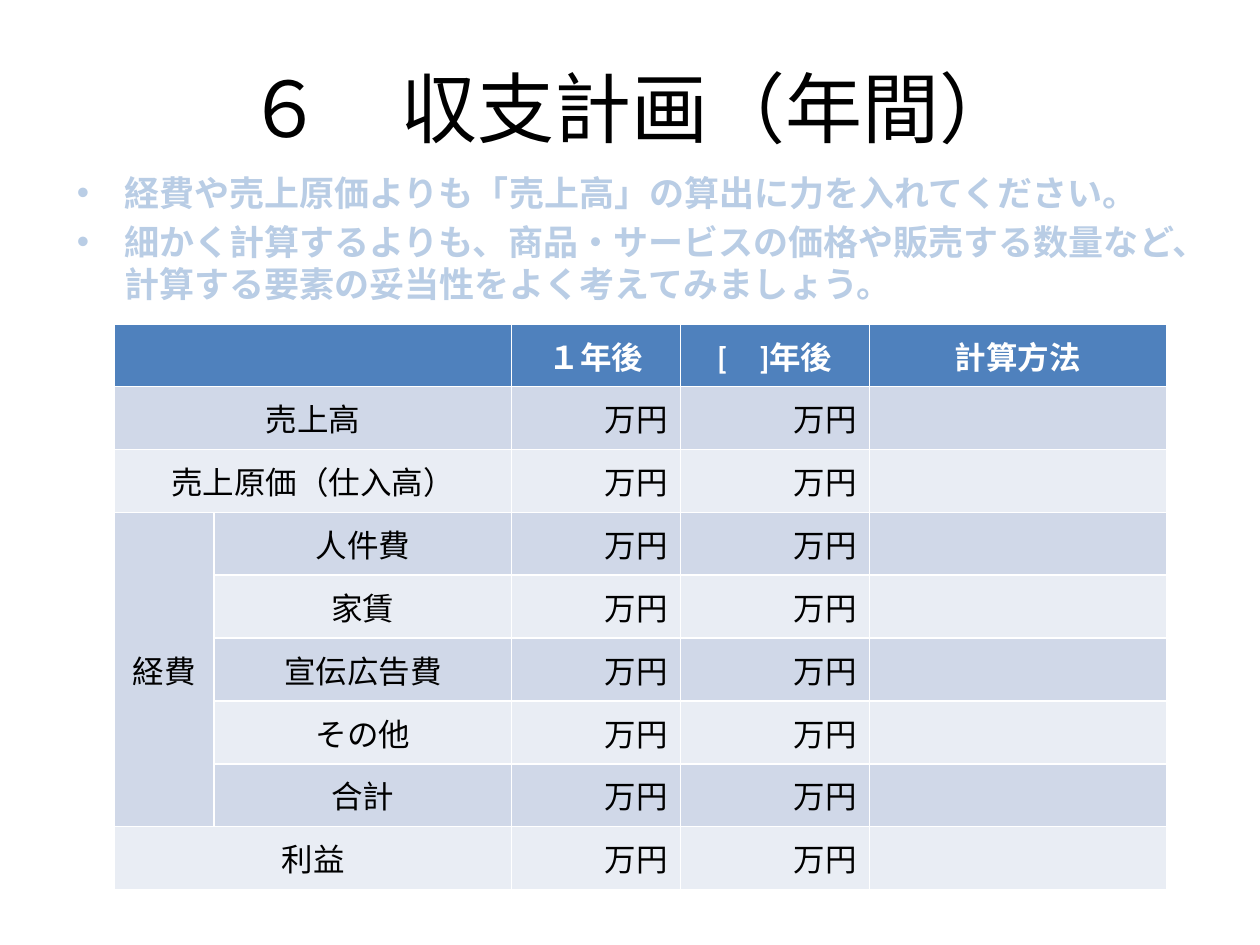
from pptx import Presentation
from pptx.dml.color import RGBColor
from pptx.enum.text import MSO_ANCHOR, PP_ALIGN
from pptx.util import Inches, Pt

CENTER = PP_ALIGN.CENTER
RIGHT = PP_ALIGN.RIGHT
MIDDLE = MSO_ANCHOR.MIDDLE
TITLE_AND_CONTENT = 1

HEADERS = ["", "", "１年後", "[　]年後", "計算方法"]
ITEMS = [
    ("売上高", ""),
    ("売上原価（仕入高）", ""),
    ("経費", "人件費"),
    ("", "家賃"),
    ("", "宣伝広告費"),
    ("", "その他"),
    ("", "合計"),
    ("利益", ""),
]
COLUMN_WIDTHS = [0.79, 2.36, 1.34, 1.5, 2.36]
COLUMN_ALIGNMENTS = [CENTER, CENTER, RIGHT, RIGHT, CENTER]
MERGES = [((0, 0), (0, 1)), ((1, 0), (1, 1)), ((2, 0), (2, 1)),
          ((3, 0), (7, 0)), ((8, 0), (8, 1))]


def color(value):
    return RGBColor.from_string(value)


class PlanSlide:
    font = "Calibri"
    black = "000000"
    white = "FFFFFF"
    pale_blue = "B9CDE5"
    header_fill = "4F81BD"
    band_fills = ["D0D8E8", "E9EDF4"]

    def __init__(self, presentation):
        layout = presentation.slide_layouts[TITLE_AND_CONTENT]
        self.slide = presentation.slides.add_slide(layout)

    def place(self, shape, left, top, width, height):
        shape.left, shape.top = Inches(left), Inches(top)
        shape.width, shape.height = Inches(width), Inches(height)

    def format_text(self, text_frame, size, text_color, bold=False, alignment=None):
        for paragraph in text_frame.paragraphs:
            paragraph.alignment = alignment
            for run in paragraph.runs:
                run.font.name = self.font
                run.font.size = Pt(size)
                run.font.bold = bold
                run.font.color.rgb = color(text_color)

    def title(self, text, *box):
        shape = self.slide.shapes.title
        self.place(shape, *box)
        shape.text_frame.text = text
        self.format_text(shape.text_frame, 44, self.black, alignment=CENTER)

    def bullets(self, lines, *box):
        shape = self.slide.placeholders[1]
        self.place(shape, *box)
        shape.text_frame.text = "\n".join(lines)
        self.format_text(shape.text_frame, 20, self.pale_blue, bold=True)

    def cell(self, cell, text, fill, text_color, bold, alignment):
        cell.fill.solid()
        cell.fill.fore_color.rgb = color(fill)
        cell.vertical_anchor = MIDDLE
        cell.text_frame.text = text
        self.format_text(cell.text_frame, 18, text_color, bold, alignment)

    def table(self, rows, left, top, width, height):
        table = self.slide.shapes.add_table(
            len(rows), len(COLUMN_WIDTHS),
            Inches(left), Inches(top), Inches(width), Inches(height)).table
        for column, column_width in zip(table.columns, COLUMN_WIDTHS):
            column.width = Inches(column_width)
        for row_index, texts in enumerate(rows):
            is_header = row_index == 0
            fill = self.header_fill if is_header else self.band_fills[(row_index - 1) % 2]
            text_color = self.white if is_header else self.black
            for column_index, text in enumerate(texts):
                alignment = CENTER if is_header else COLUMN_ALIGNMENTS[column_index]
                self.cell(table.cell(row_index, column_index), text, fill,
                          text_color, is_header, alignment)
        for first, last in MERGES:
            table.cell(*first).merge(table.cell(*last))


def main():
    presentation = Presentation()
    presentation.slide_width = Inches(10)
    presentation.slide_height = Inches(7.5)
    plan = PlanSlide(presentation)
    plan.title("６　収支計画（年間）", 0.19, 0.22, 9.65, 1.25)
    plan.bullets([
        "経費や売上原価よりも「売上高」の算出に力を入れてください。",
        "細かく計算するよりも、商品・サービスの価格や販売する数量など、"
        "計算する要素の妥当性をよく考えてみましょう。",
    ], 0.51, 1.31, 9, 1.26)
    rows = [HEADERS] + [[*labels, "万円", "万円", ""] for labels in ITEMS]
    plan.table(rows, 0.91, 2.57, 8.35, 4.49)
    presentation.save("out.pptx")


if __name__ == "__main__":
    main()
